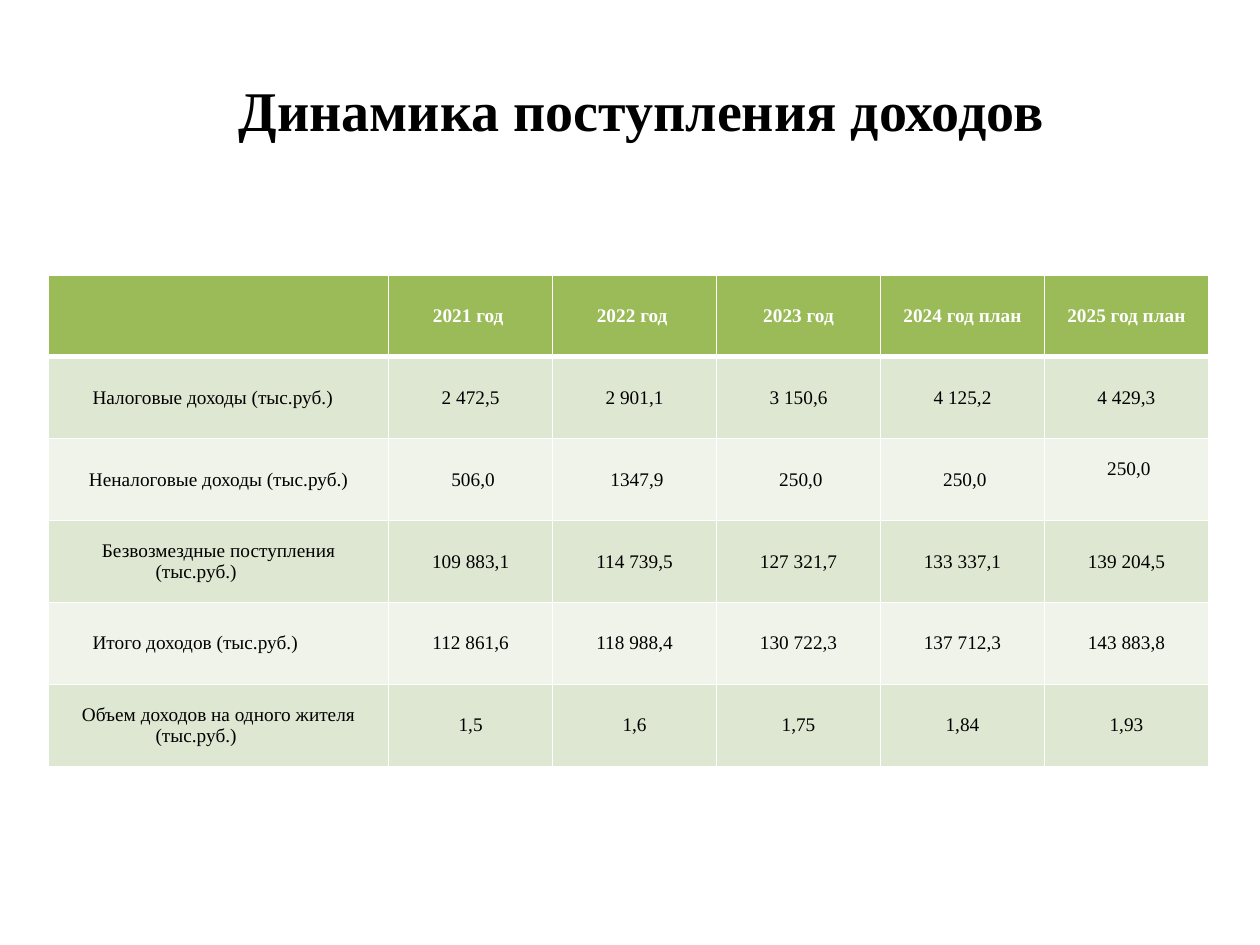
from lxml.etree import SubElement
from pptx import Presentation
from pptx.dml.color import RGBColor
from pptx.enum.text import MSO_ANCHOR, MSO_AUTO_SIZE, PP_ALIGN
from pptx.oxml.ns import qn
from pptx.util import Pt

COLORS = {"header": "9BBB59", "odd": "DEE7D1", "even": "EFF3EA",
          "line": "FFFFFF", "light": "FFFFFF", "dark": "000000"}
FONT = "Times New Roman"
COL_WIDTHS = [194.4] + [93.7] * 5
ROW_HEIGHT = 46.8
ROWS = [
    ["", "2021 год ", "2022 год ", "2023 год", "2024 год план", "2025 год план"],
    ["Налоговые доходы (тыс.руб.)\t", "2 472,5", "2 901,1", "3 150,6", "4 125,2", "4 429,3"],
    ["Неналоговые доходы (тыс.руб.)", " 506,0", " 1347,9", " 250,0", " 250,0", " 250,0"],
    ["Безвозмездные поступления (тыс.руб.)\t", "109 883,1", "114 739,5", "127 321,7",
     "133 337,1", "139 204,5"],
    ["Итого доходов (тыс.руб.)\t", "112 861,6", "118 988,4", "130 722,3",
     "137 712,3", "143 883,8"],
    ["Объем доходов на одного жителя (тыс.руб.)\t", "1,5", "1,6", "1,75", "1,84", "1,93"],
]


def set_attrs(obj, values):
    """Set every attribute named in a dict of format values."""
    for name, value in values.items():
        setattr(obj, name, value)


def write_text(tf, text, size, bold, color):
    """Write one centred paragraph into a text frame."""
    p = tf.paragraphs[0]
    p.alignment = PP_ALIGN.CENTER
    r = p.add_run()
    r.text = text
    set_attrs(r.font, {"name": FONT, "size": Pt(size), "bold": bold})
    r.font.color.rgb = RGBColor.from_string(COLORS[color])


def add_title(s, text):
    """Place and format the title placeholder."""
    sp = s.shapes.title
    set_attrs(sp, {"left": Pt(42.5), "top": Pt(43.2), "width": Pt(648), "height": Pt(90)})
    set_attrs(sp.text_frame, {"word_wrap": True, "auto_size": MSO_AUTO_SIZE.NONE,
                              "vertical_anchor": MSO_ANCHOR.TOP, "margin_top": 0})
    write_text(sp.text_frame, text, 32, True, "dark")


def set_borders(cell, bottom):
    """Draw the cell borders, with the given bottom width."""
    tcPr = cell._tc.get_or_add_tcPr()
    for i, (side, width) in enumerate([("L", 1), ("R", 1), ("T", 1), ("B", bottom)]):
        ln = SubElement(tcPr, qn(f"a:ln{side}"), w=str(Pt(width)))
        fill = SubElement(ln, qn("a:solidFill"))
        SubElement(fill, qn("a:srgbClr"), val=COLORS["line"])
        tcPr.insert(i, ln)


def format_cell(cell, text, row):
    """Fill, border and write one cell according to its row."""
    header = row == 0
    fill = "header" if header else "odd" if row % 2 else "even"
    cell.fill.solid()
    cell.fill.fore_color.rgb = RGBColor.from_string(COLORS[fill])
    cell.vertical_anchor = MSO_ANCHOR.MIDDLE
    set_borders(cell, 3 if header else 1)
    if text:
        write_text(cell.text_frame, text, 11, header, "light" if header else "dark")


def add_income_table(s):
    """Add the table of income by year."""
    table = s.shapes.add_table(len(ROWS), len(COL_WIDTHS), Pt(27.7), Pt(157.1),
                               Pt(sum(COL_WIDTHS)), Pt(ROW_HEIGHT * len(ROWS))).table
    for col, width in zip(table.columns, COL_WIDTHS):
        col.width = Pt(width)
    for i, texts in enumerate(ROWS):
        table.rows[i].height = Pt(ROW_HEIGHT)
        for j, text in enumerate(texts):
            format_cell(table.cell(i, j), text, i)
    table.cell(2, 5).margin_bottom = Pt(16.2)


def main():
    """Build the slide and save it."""
    prs = Presentation()
    set_attrs(prs, {"slide_width": Pt(720), "slide_height": Pt(540)})
    s = prs.slides.add_slide(prs.slide_layouts[5])
    add_income_table(s)
    add_title(s, "Динамика поступления доходов")
    prs.save("out.pptx")


if __name__ == "__main__":
    main()
